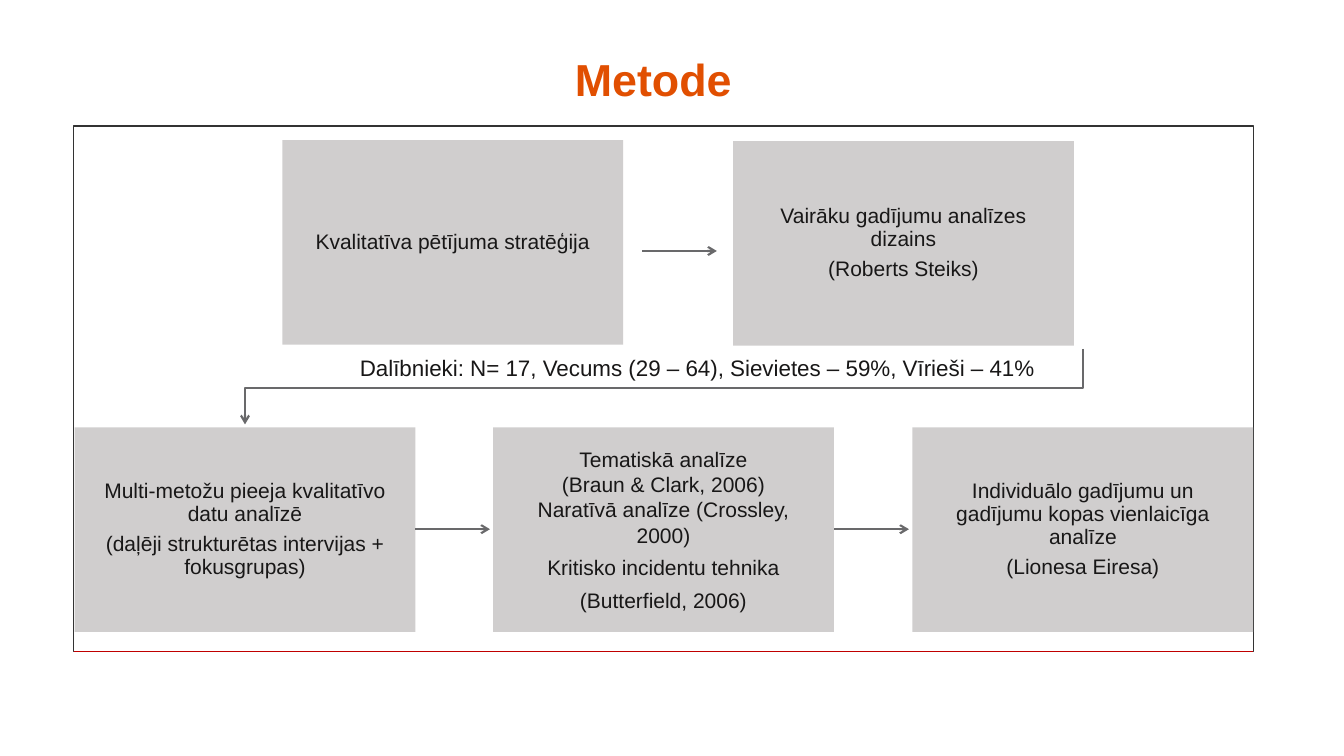
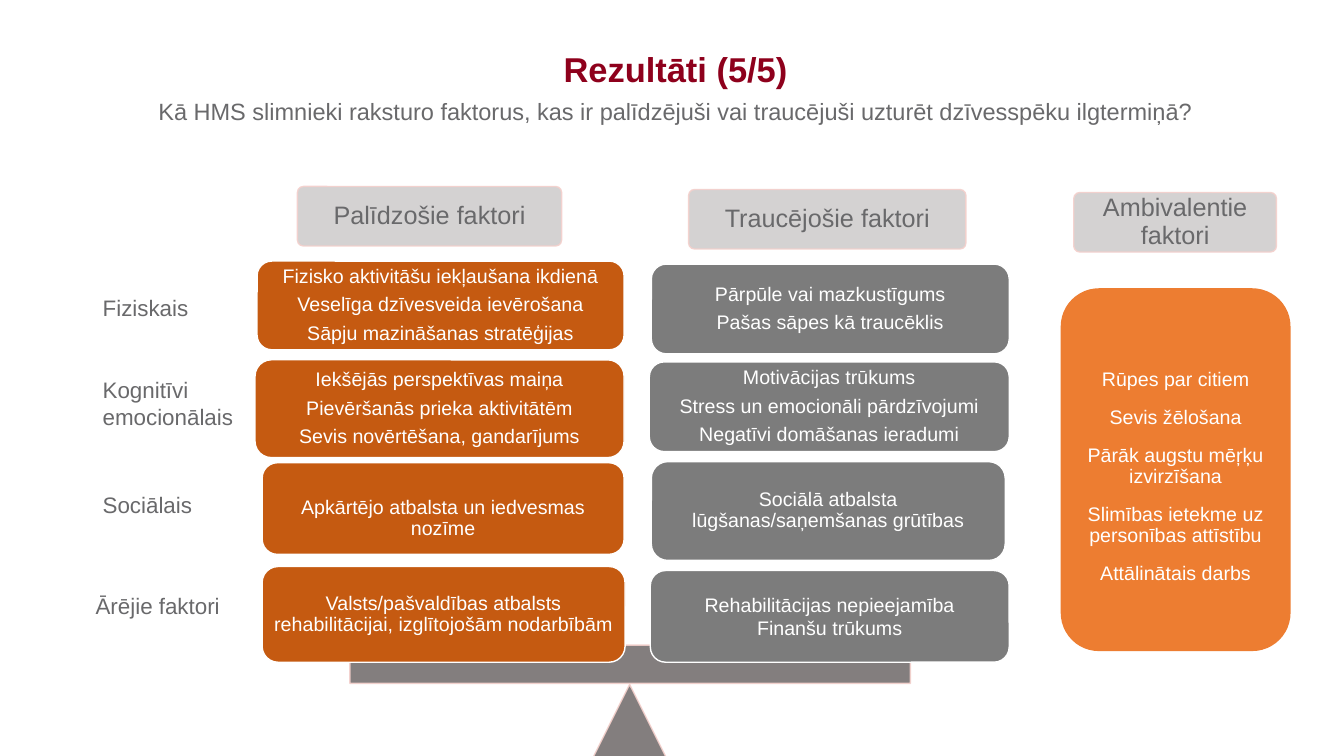
from collections import namedtuple
from dataclasses import dataclass

from lxml.etree import SubElement
from pptx import Presentation
from pptx.dml.color import RGBColor
from pptx.enum.shapes import MSO_CONNECTOR, MSO_SHAPE
from pptx.enum.text import MSO_ANCHOR as Anchor, PP_ALIGN as Align
from pptx.oxml.ns import qn
from pptx.util import Inches, Pt


@dataclass(frozen=True)
class Theme:
    font: str = "Arial"
    ink: str = "181717"
    muted: str = "69696B"
    white: str = "FFFFFF"
    orange_title: str = "E14F01"
    wine_title: str = "8E001C"
    frame: str = "333333"
    frame_base: str = "C00000"
    panel: str = "D0CECE"
    blush: str = "F4D0CC"
    balance: str = "767171"
    helping: str = "C55A11"
    hindering: str = "7C7C7C"
    ambivalent: str = "ED7D31"
    method_title: float = 32
    results_title: float = 24.6
    question: float = 16.8
    heading: float = 18
    label: float = 16
    step: float = 15
    card: float = 14
    tight: float = 0.9
    gap_ratio: float = 0.36


T = Theme()


class Box(namedtuple("Box", "left top width height")):
    def inner(self, dx, dy, width, height):
        return Box(self.left + dx, self.top + dy, width, height)

    def inches(self):
        return [Inches(round(length, 2)) for length in self]


def rgb(color):
    return RGBColor.from_string(color)


def make_translucent(properties, percent):
    for color in properties.iter(qn("a:srgbClr")):
        SubElement(color, qn("a:alpha")).set("val", str(percent * 1000))


def write(frame, lines, size, color, align=Align.CENTER, anchor=Anchor.MIDDLE,
          inset=(0.1, 0.05, 0.1, 0.05), spacing=1.0, gaps=None, bold=False):
    frame.word_wrap = True
    frame.vertical_anchor = anchor
    frame.margin_left, frame.margin_top, frame.margin_right, frame.margin_bottom = map(Inches, inset)
    frame.text = "\n".join(lines)
    for index, paragraph in enumerate(frame.paragraphs):
        paragraph.alignment = align
        paragraph.line_spacing = spacing
        paragraph.space_before = Pt(0)
        paragraph.space_after = Pt(gaps[index] if gaps else 0)
        for run in paragraph.runs:
            run.font.name = T.font
            run.font.size = Pt(size)
            run.font.bold = bold
            run.font.color.rgb = rgb(color)


def add_panel(slide, box, kind, fill=None, line=None, width=1, opacity=100):
    panel = slide.shapes.add_shape(kind, *box.inches())
    panel.shadow.inherit = False
    if fill:
        panel.fill.solid()
        panel.fill.fore_color.rgb = rgb(fill)
    else:
        panel.fill.background()
    if line:
        panel.line.color.rgb = rgb(line)
        panel.line.width = Pt(width)
    else:
        panel.line.fill.background()
    if opacity < 100:
        make_translucent(panel.element.spPr, opacity)
    return panel


def add_text(slide, box, lines, size, color, **style):
    caption = slide.shapes.add_textbox(*box.inches())
    write(caption.text_frame, lines, size, color, **style)


def set_title(slide, box, title, size, color):
    heading = slide.shapes.title
    heading.left, heading.top, heading.width, heading.height = box.inches()
    write(heading.text_frame, [title], size, color, anchor=Anchor.TOP, inset=(0, 0, 0, 0), bold=True)


def style_line(stroke, color, width, arrow=False):
    stroke.line.color.rgb = rgb(color)
    stroke.line.width = Pt(width)
    if arrow:
        outline = stroke.element.spPr.find(qn("a:ln"))
        SubElement(outline, qn("a:tailEnd")).set("type", "arrow")


def add_rule(slide, left, right, y, color, width, arrow=False):
    rule = slide.shapes.add_connector(MSO_CONNECTOR.STRAIGHT, Inches(left), Inches(y), Inches(right), Inches(y))
    style_line(rule, color, width, arrow)
    SubElement(rule.element.spPr, qn("a:effectLst"))


def add_return_arrow(slide, points):
    start, *rest = [(Inches(x), Inches(y)) for x, y in points]
    builder = slide.shapes.build_freeform(*start)
    builder.add_line_segments(rest, close=False)
    bend = builder.convert_to_shape()
    bend.shadow.inherit = False
    bend.fill.background()
    style_line(bend, T.muted, 1.5, arrow=True)


def add_step(slide, box, lines, spacing=T.tight, close_lines=0):
    step = add_panel(slide, box, MSO_SHAPE.RECTANGLE, T.panel)
    gaps = [0 if index < close_lines else T.step * T.gap_ratio for index in range(len(lines))]
    write(step.text_frame, lines, T.step, T.ink, inset=(0.17,) * 4, spacing=spacing, gaps=gaps)


def add_method_flow(slide, box):
    step_width, step_height, pitch, row = 3.38, 2.03, 4.155, 2.99
    add_panel(slide, box, MSO_SHAPE.RECTANGLE, line=T.frame, width=0.75)
    add_rule(slide, box.left, box.left + box.width, box.top + box.height, T.frame_base, 0.75)

    add_step(slide, box.inner(2.07, 0.14, step_width, step_height), ["Kvalitatīva pētījuma stratēģija"])
    add_step(slide, box.inner(6.54, 0.15, step_width, step_height),
             ["Vairāku gadījumu analīzes dizains", "(Roberts Steiks)"])
    analysis_steps = [
        (["Multi-metožu pieeja kvalitatīvo datu analīzē",
          "(daļēji strukturētas intervijas + fokusgrupas)"], {}),
        (["Tematiskā analīze", "(Braun & Clark, 2006)", "Naratīvā analīze (Crossley, 2000)",
          "Kritisko incidentu tehnika", "(Butterfield, 2006)"], {"spacing": 1.0, "close_lines": 2}),
        (["Individuālo gadījumu un gadījumu kopas vienlaicīga analīze", "(Lionesa Eiresa)"], {}),
    ]
    for index, (lines, style) in enumerate(analysis_steps):
        add_step(slide, box.inner(0.01 + index * pitch, row, step_width, step_height), lines, **style)

    for dx, dy in [(5.64, 1.24), (3.39, 4), (3.39 + pitch, 4)]:
        add_rule(slide, box.left + dx, box.left + dx + 0.74, box.top + dy, T.muted, 1.5, arrow=True)
    add_return_arrow(slide, [(box.left + dx, box.top + dy) for dx, dy in
                             [(10.01, 2.21), (10.01, 2.6), (1.7, 2.6), (1.7, 2.96)]])
    add_text(slide, box.inner(2.74, 2.21, 7.05, 0.37),
             ["Dalībnieki: N= 17, Vecums (29 – 64), Sievietes – 59%, Vīrieši – 41%"],
             T.label, T.ink, align=Align.LEFT, anchor=Anchor.TOP)


def add_heading(slide, box, name):
    heading = add_panel(slide, box, MSO_SHAPE.ROUNDED_RECTANGLE, T.panel, T.blush, opacity=90)
    heading.adjustments[0] = 0.1
    write(heading.text_frame, [name], T.heading, T.muted, inset=(0.07,) * 4, spacing=T.tight)


def add_card(slide, box, lines, fill, line=T.white, gap=T.card * T.gap_ratio,
             spacing=T.tight, inset=0.06, drop=0):
    card = add_panel(slide, box, MSO_SHAPE.ROUNDED_RECTANGLE, fill, line)
    write(card.text_frame, lines, T.card, T.white, inset=(inset, inset + drop, inset, inset),
          spacing=spacing, gaps=[gap] * len(lines))


def add_factor_column(slide, box, name, heading_dx, heading_width, fill, cards):
    add_heading(slide, box.inner(heading_dx, 0, heading_width, 0.59), name)
    for place, lines, style in cards:
        add_card(slide, box.inner(*place), lines, fill, **style)


def add_balance(slide, box):
    for kind, place in [(MSO_SHAPE.ISOSCELES_TRIANGLE, (2.31, 0.39, 0.93, 0.93)),
                        (MSO_SHAPE.RECTANGLE, (0, 0, box.width, 0.38))]:
        add_panel(slide, box.inner(*place), kind, T.balance, T.blush, opacity=90)


def add_row_labels(slide, box):
    for dx, dy, height, name in [(0.07, 0, 0.37, "Fiziskais"),
                                 (0.07, 0.81, 0.64, "Kognitīvi emocionālais"),
                                 (0.07, 1.95, 0.37, "Sociālais"),
                                 (0, 2.96, 0.37, "Ārējie faktori")]:
        add_text(slide, box.inner(dx, dy, box.width, height), [name], T.label, T.muted,
                 align=Align.LEFT, anchor=Anchor.TOP)


def build_method(slide):
    set_title(slide, Box(0.73, 0.51, 11.5, 0.6), "Metode", T.method_title, T.orange_title)
    add_method_flow(slide, Box(0.73, 1.25, 11.7, 5.21))


def build_results(slide):
    set_title(slide, Box(0.95, 0.48, 11.5, 0.42), "Rezultāti (5/5)", T.results_title, T.wine_title)
    add_text(slide, Box(0.95, 0.96, 11.5, 0.35),
             ["Kā HMS slimnieki raksturo faktorus, kas ir palīdzējuši vai traucējuši "
              "uzturēt dzīvesspēku ilgtermiņā?"],
             T.question, T.muted, anchor=Anchor.TOP, inset=(0, 0, 0, 0))
    add_balance(slide, Box(3.47, 6.4, 5.56, 1.32))
    add_row_labels(slide, Box(0.85, 2.87, 1.75, 3.33))

    add_factor_column(slide, Box(2.53, 1.85, 3.66, 4.72), "Palīdzošie faktori", 0.42, 2.62, T.helping, [
        ((0.02, 0.74, 3.64, 0.88), ["Fizisko aktivitāšu iekļaušana ikdienā", "Veselīga dzīvesveida ievērošana",
                                    "Sāpju mazināšanas stratēģijas"], {}),
        ((0, 1.72, 3.66, 0.97), ["Iekšējās perspektīvas maiņa", "Pievēršanās prieka aktivitātēm",
                                 "Sevis novērtēšana, gandarījums"], {}),
        ((0.07, 2.74, 3.59, 0.91), ["Apkārtējo atbalsta un iedvesmas nozīme"], {"drop": 0.2}),
        ((0.07, 3.77, 3.6, 0.95), ["Valsts/pašvaldības atbalsts rehabilitācijai, izglītojošām nodarbībām"], {}),
    ])
    add_factor_column(slide, Box(6.44, 1.88, 3.57, 4.69), "Traucējošie faktori", 0.39, 2.75, T.hindering, [
        ((0.02, 0.74, 3.55, 0.89), ["Pārpūle vai mazkustīgums", "Pašas sāpes kā traucēklis"], {}),
        ((0, 1.71, 3.57, 0.89), ["Motivācijas trūkums", "Stress un emocionāli pārdzīvojumi",
                                 "Negatīvi domāšanas ieradumi"], {}),
        ((0.02, 2.7, 3.51, 0.98), ["Sociālā atbalsta lūgšanas/saņemšanas grūtības"], {}),
        ((0.01, 3.78, 3.56, 0.91), ["Rehabilitācijas nepieejamība", "Finanšu trūkums"],
         {"gap": 0, "spacing": 1.0}),
    ])
    add_factor_column(slide, Box(10.52, 1.91, 2.28, 4.55), "Ambivalentie faktori", 0.13, 2.01, T.ambivalent, [
        ((0, 0.95, 2.28, 3.6), ["Rūpes par citiem", "Sevis žēlošana", "Pārāk augstu mēŗķu izvirzīšana",
                                "Slimības ietekme uz personības attīstību", "Attālinātais darbs"],
         {"line": None, "gap": 11.9, "inset": 0.1, "drop": 0.15}),
    ])


def main():
    deck = Presentation()
    deck.slide_width, deck.slide_height = Inches(13.33), Inches(7.5)
    title_only = deck.slide_layouts[5]
    for build in (build_method, build_results):
        build(deck.slides.add_slide(title_only))
    deck.save("out.pptx")


if __name__ == "__main__":
    main()
